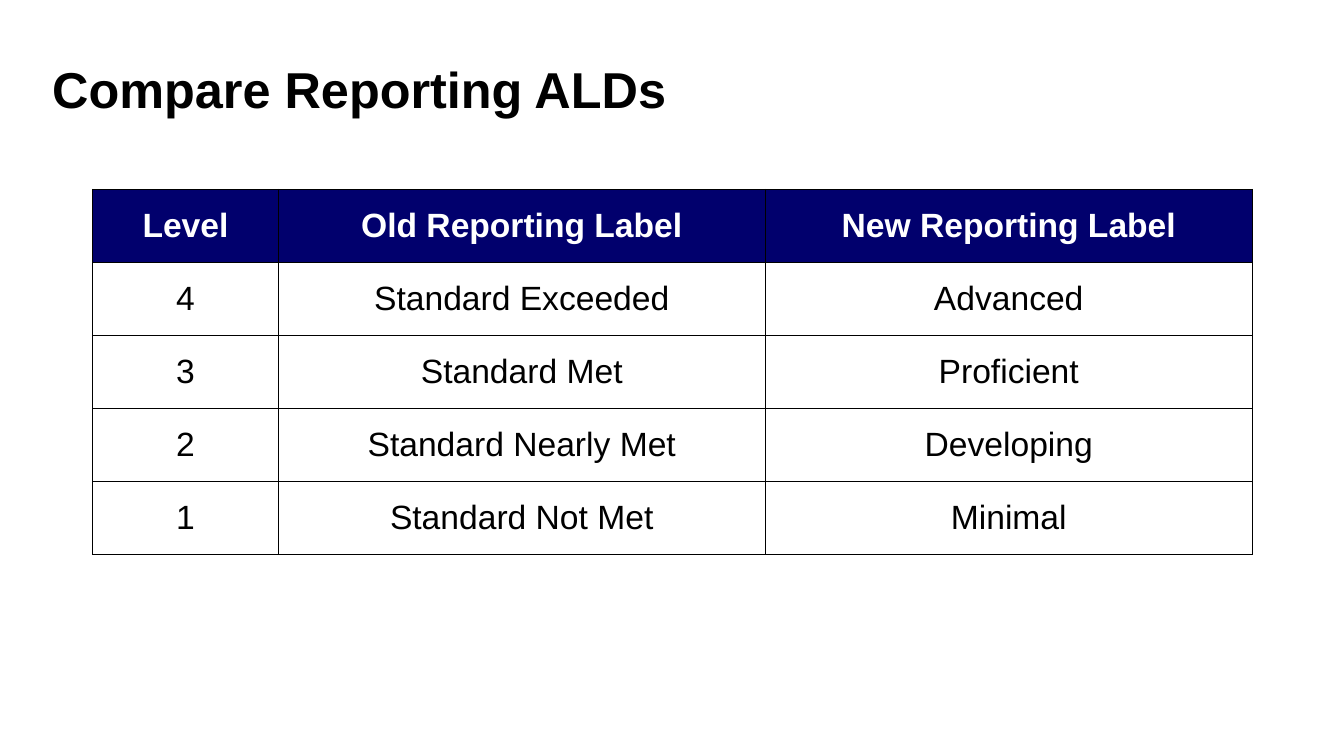
from dataclasses import dataclass

from lxml import etree
from pptx import Presentation
from pptx import util as u
from pptx.dml.color import RGBColor
from pptx.enum import text
from pptx.oxml import ns


@dataclass(frozen=True)
class Theme:
    font: str = "Arial"
    ink: str = "000000"
    paper: str = "FFFFFF"
    navy: str = "01006D"
    title: int = 36
    body: int = 24
    rule: int = 1


@dataclass(frozen=True)
class Style:
    size: int
    color: str
    bold: bool
    align: text.PP_ALIGN


@dataclass(frozen=True)
class Level:
    rank: str
    old: str
    new: str


THEME = Theme()
CENTER = text.PP_ALIGN.CENTER
TITLE = Style(THEME.title, THEME.ink, True, text.PP_ALIGN.LEFT)
HEAD = Style(THEME.body, THEME.paper, True, CENTER)
BODY = Style(THEME.body, THEME.ink, False, CENTER)

LEVELS = [
    Level("Level", "Old Reporting Label", "New Reporting Label"),
    Level("4", "Standard Exceeded", "Advanced"),
    Level("3", "Standard Met", "Proficient"),
    Level("2", "Standard Nearly Met", "Developing"),
    Level("1", "Standard Not Met", "Minimal"),
]
WIDTHS = (1.84, 4.83, 4.83)
TALL = 3.62


def write(frame, words: str, style: Style) -> None:
    para = frame.paragraphs[0]
    para.alignment = style.align
    run = para.add_run()
    run.text = words
    run.font.name = THEME.font
    run.font.size = u.Pt(style.size)
    run.font.bold = style.bold
    run.font.color.rgb = RGBColor.from_string(style.color)


def border(cell) -> None:
    """Rule all four sides; the lines must come before the cell fill."""
    props = cell._tc.get_or_add_tcPr()
    for side in ("lnL", "lnR", "lnT", "lnB"):
        line = etree.SubElement(props, ns.qn(f"a:{side}"), w=str(u.Pt(THEME.rule)))
        fill = etree.SubElement(line, ns.qn("a:solidFill"))
        etree.SubElement(fill, ns.qn("a:srgbClr"), val=THEME.ink)


def dress(cell, words: str, style: Style, fill: str) -> None:
    border(cell)
    cell.fill.solid()
    cell.fill.fore_color.rgb = RGBColor.from_string(fill)
    cell.vertical_anchor = text.MSO_ANCHOR.MIDDLE
    write(cell.text_frame, words, style)


def add_title(slide, words: str) -> None:
    box = slide.shapes.add_textbox(
        u.Inches(0.42), u.Inches(0), u.Inches(12.5), u.Inches(1.75))
    frame = box.text_frame
    frame.word_wrap = True
    frame.vertical_anchor = text.MSO_ANCHOR.MIDDLE
    write(frame, words, TITLE)


def add_grid(slide, levels: list[Level]) -> None:
    table = slide.shapes.add_table(
        len(levels), len(WIDTHS), u.Inches(0.92), u.Inches(1.88),
        u.Inches(sum(WIDTHS)), u.Inches(TALL)).table
    table.horz_banding = False
    for col, width in zip(table.columns, WIDTHS):
        col.width = u.Inches(width)
    for i, (row, level) in enumerate(zip(table.rows, levels)):
        style, fill = (BODY, THEME.paper) if i else (HEAD, THEME.navy)
        for cell, words in zip(row.cells, (level.rank, level.old, level.new)):
            dress(cell, words, style, fill)


def main() -> None:
    deck = Presentation()
    deck.slide_width = u.Inches(13.33)
    deck.slide_height = u.Inches(7.5)
    slide = deck.slides.add_slide(deck.slide_layouts[6])
    add_title(slide, "Compare Reporting ALDs")
    add_grid(slide, LEVELS)
    deck.save("out.pptx")


if __name__ == "__main__":
    main()
